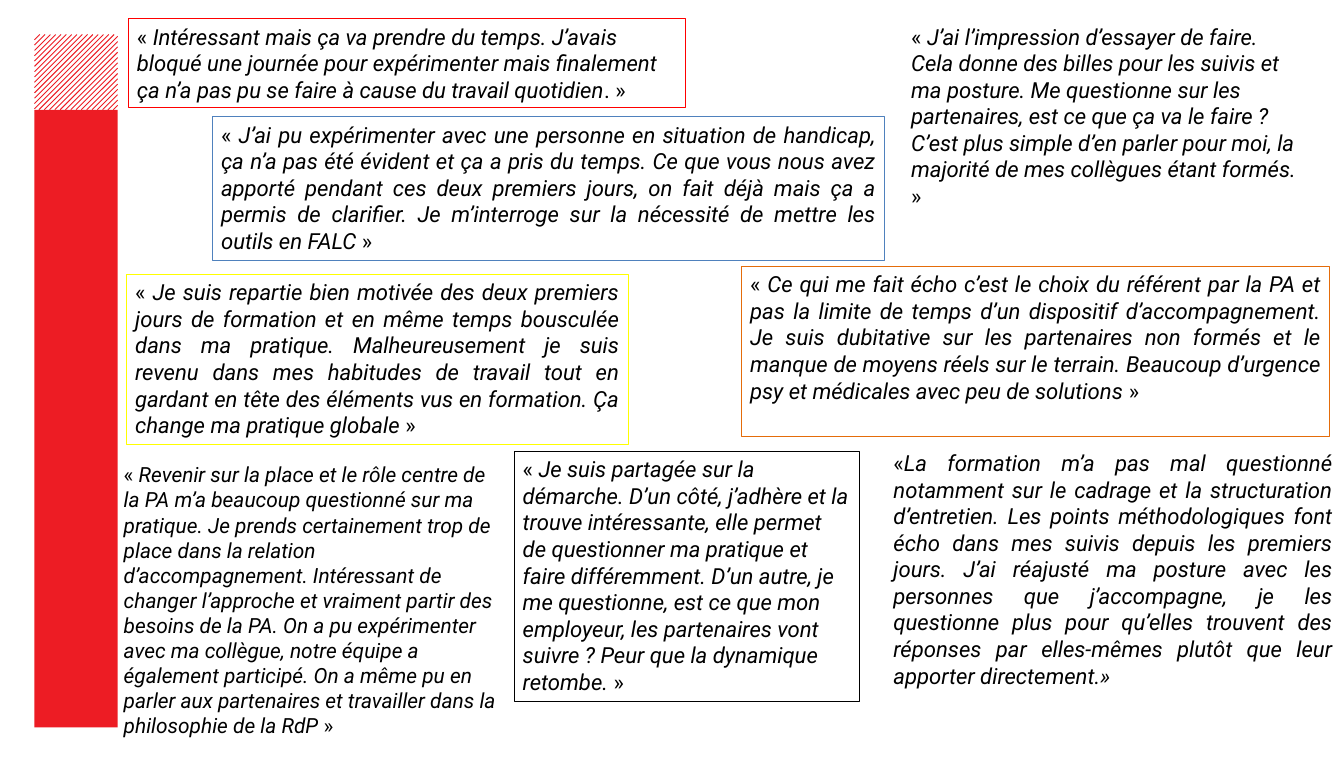
from dataclasses import dataclass

from lxml import etree
from pptx import Presentation
from pptx.dml.color import RGBColor
from pptx.enum.shapes import MSO_CONNECTOR, MSO_SHAPE
from pptx.enum.text import MSO_AUTO_SIZE, PP_ALIGN
from pptx.oxml.ns import qn
from pptx.slide import Slide
from pptx.util import Inches, Pt

RECTANGLE = MSO_SHAPE.RECTANGLE
STRAIGHT = MSO_CONNECTOR.STRAIGHT
GROW = MSO_AUTO_SIZE.SHAPE_TO_FIT_TEXT
LEFT, JUSTIFY = PP_ALIGN.LEFT, PP_ALIGN.JUSTIFY

FONT = "Roboto"
TEXT_COLOR = "000000"
BAND_COLOR = "ED1C24"
LINE_WIDTH = 0.75

BAND_LEFT, BAND_WIDTH = 0.39, 0.94
HATCH_TOP, HATCH_HEIGHT = 0.39, 0.85
HATCH_STEP, HATCH_COUNT = 0.06, 29
BAR_HEIGHT = 6.98


@dataclass(frozen=True)
class Quote:
    left: float
    top: float
    width: float
    height: float
    opening: str
    body: str
    closing: str
    border: str | None = None
    alignment: PP_ALIGN = LEFT
    size: float = 18


QUOTES = [
    Quote(1.45, 0.21, 6.3, 1.01, "« ",
          "Intéressant mais ça va prendre du temps. J’avais bloqué une journée pour "
          "expérimenter mais finalement ça n’a pas pu se faire à cause du travail quotidien",
          ". »", border="FF0000"),
    Quote(2.4, 1.32, 7.6, 1.62, "« ",
          "J’ai pu expérimenter avec une personne en situation de handicap, ça n’a pas été "
          "évident et ça a pris du temps. Ce que vous nous avez apporté pendant ces deux "
          "premiers jours, on fait déjà mais ça a permis de clarifier. Je m’interroge sur "
          "la nécessité de mettre les outils en FALC ",
          "»", border="4F81BD", alignment=JUSTIFY),
    Quote(8.38, 3.01, 6.65, 1.92, "« ",
          "Ce qui me fait écho c’est le choix du référent par la PA et pas la limite de "
          "temps d’un dispositif d’accompagnement. Je suis dubitative sur les partenaires "
          "non formés et le manque de moyens réels sur le terrain. Beaucoup d’urgence psy "
          "et médicales avec peu de solutions",
          " » ", border="E46C0A", alignment=JUSTIFY),
    Quote(1.43, 3.1, 5.67, 1.92, "« ",
          "Je suis repartie bien motivée des deux premiers jours de formation et en même "
          "temps bousculée dans ma pratique. Malheureusement je suis revenu dans mes "
          "habitudes de travail tout en gardant en tête des éléments vus en formation. "
          "Ça change ma pratique globale ",
          "»", border="FFFF00", alignment=JUSTIFY),
    Quote(10, 5.03, 5.16, 2.83, "«",
          "La formation m’a pas mal questionné notamment sur le cadrage et la structuration "
          "d’entretien. Les points méthodologiques font écho dans mes suivis depuis les "
          "premiers jours. J’ai réajusté ma posture avec les personnes que j’accompagne, je "
          "les questionne plus pour qu’elles trouvent des réponses par elles-mêmes plutôt "
          "que leur apporter directement.»",
          "", alignment=JUSTIFY),
    Quote(5.81, 5.1, 3.9, 2.83, "« ",
          "Je suis partagée sur la démarche. D’un côté, j’adhère et la trouve intéressante, "
          "elle permet de questionner ma pratique et faire différemment. D’un autre, je me "
          "questionne, est ce que mon employeur, les partenaires vont suivre ? Peur que la "
          "dynamique retombe. ",
          "»", border="000000"),
    Quote(1.3, 5.17, 4.51, 3.25, "« ",
          "Revenir sur la place et le rôle centre de la PA m’a beaucoup questionné sur ma "
          "pratique. Je prends certainement trop de place dans la relation "
          "d’accompagnement. Intéressant de changer l’approche et vraiment partir des "
          "besoins de la PA. On a pu expérimenter avec ma collègue, notre équipe a également "
          "participé. On a même pu en parler aux partenaires et travailler dans la "
          "philosophie de la RdP ",
          "»", size=17),
    Quote(10.2, 0.21, 4.57, 2.22, "« ",
          "J’ai l’impression d’essayer de faire. Cela donne des billes pour les suivis et ma "
          "posture. Me questionne sur les partenaires, est ce que ça va le faire ? C’est "
          "plus simple d’en parler pour moi, la majorité de mes collègues étant formés. ",
          "»"),
]


def color(value: str) -> RGBColor:
    return RGBColor.from_string(value)


def add_bar(slide: Slide) -> None:
    bar = slide.shapes.add_shape(
        RECTANGLE, Inches(BAND_LEFT), Inches(HATCH_TOP + HATCH_HEIGHT),
        Inches(BAND_WIDTH), Inches(BAR_HEIGHT))
    bar.shadow.inherit = False
    bar.fill.solid()
    bar.fill.fore_color.rgb = color(BAND_COLOR)
    bar.line.fill.background()


def add_hatching(slide: Slide) -> None:
    """Draw 45° strokes clipped to the area above the bar."""
    for number in range(1, HATCH_COUNT + 1):
        reach = number * HATCH_STEP
        stroke = slide.shapes.add_connector(
            STRAIGHT,
            Inches(BAND_LEFT + min(reach, BAND_WIDTH)),
            Inches(HATCH_TOP + max(0, reach - BAND_WIDTH)),
            Inches(BAND_LEFT + max(0, reach - HATCH_HEIGHT)),
            Inches(HATCH_TOP + min(reach, HATCH_HEIGHT)))
        stroke.line.color.rgb = color(BAND_COLOR)
        stroke.line.width = Pt(LINE_WIDTH)
        etree.SubElement(stroke._element.spPr, qn("a:effectLst"))


def add_quote(slide: Slide, quote: Quote) -> None:
    box = slide.shapes.add_textbox(
        Inches(quote.left), Inches(quote.top), Inches(quote.width), Inches(quote.height))
    if quote.border:
        box.line.color.rgb = color(quote.border)
        box.line.width = Pt(LINE_WIDTH)
    text_frame = box.text_frame
    text_frame.word_wrap = True
    text_frame.auto_size = GROW
    paragraph = text_frame.paragraphs[0]
    paragraph.alignment = quote.alignment
    for text, italic in ((quote.opening, False), (quote.body, True), (quote.closing, False)):
        if not text:
            continue
        run = paragraph.add_run()
        run.text = text
        run.font.name = FONT
        run.font.size = Pt(quote.size)
        run.font.italic = italic
        run.font.color.rgb = color(TEXT_COLOR)


def main() -> None:
    presentation = Presentation()
    presentation.slide_width = Inches(15.19)
    presentation.slide_height = Inches(8.61)
    slide = presentation.slides.add_slide(presentation.slide_layouts[6])
    add_bar(slide)
    add_hatching(slide)
    for quote in QUOTES:
        add_quote(slide, quote)
    presentation.save("out.pptx")


if __name__ == "__main__":
    main()
